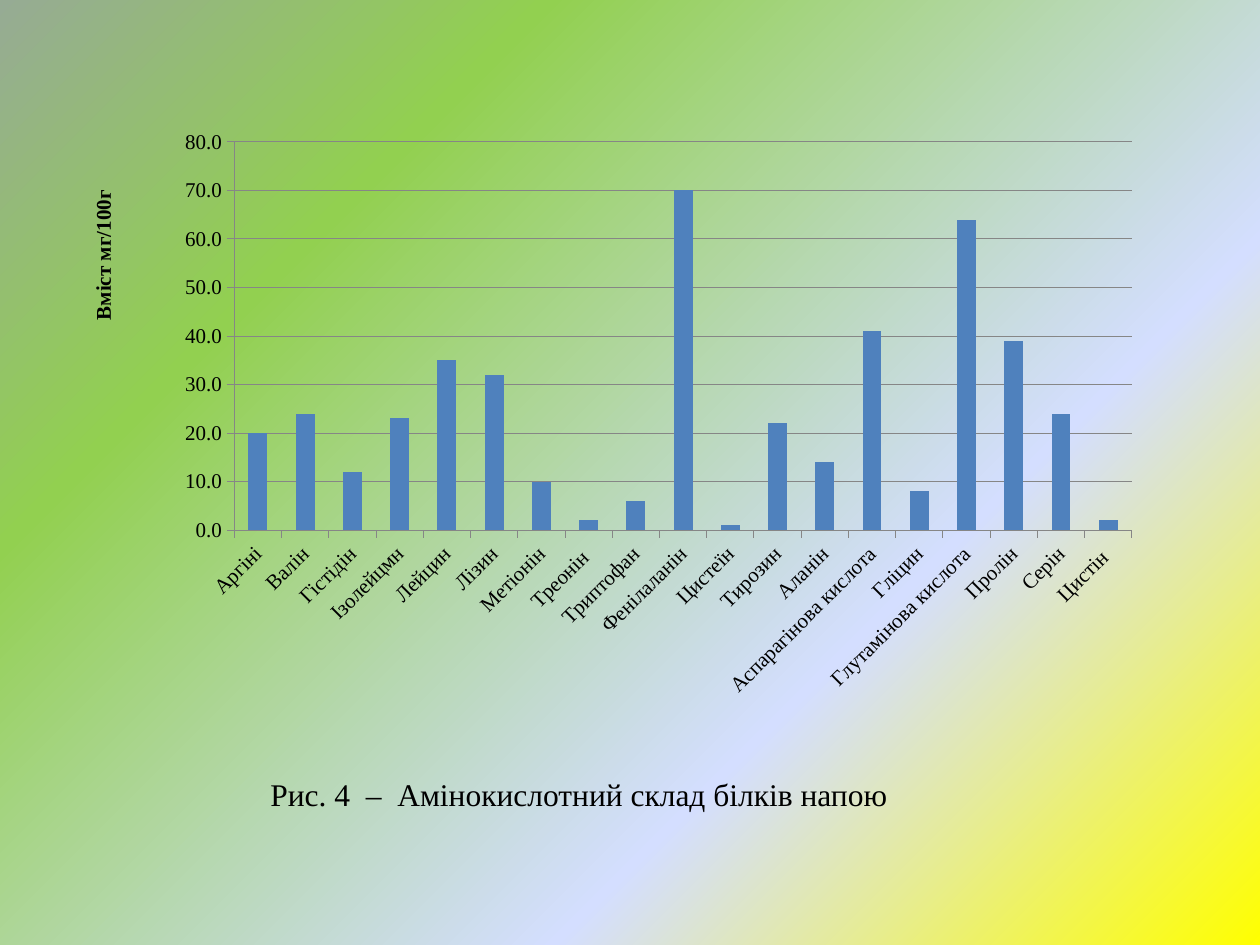
from lxml import etree
from pptx import Presentation
from pptx.chart.data import CategoryChartData
from pptx.dml.color import RGBColor
from pptx.enum.chart import XL_CHART_TYPE, XL_TICK_MARK
from pptx.enum.text import MSO_AUTO_SIZE, PP_ALIGN
from pptx.oxml import parse_xml
from pptx.oxml.ns import nsdecls, qn
from pptx.util import Emu, Pt

COLUMNS = XL_CHART_TYPE.COLUMN_CLUSTERED
OUTSIDE = XL_TICK_MARK.OUTSIDE
JUSTIFY = PP_ALIGN.JUSTIFY
GROW = MSO_AUTO_SIZE.SHAPE_TO_FIT_TEXT

FONT = "Times New Roman"
BLACK, BLUE, GREY = "000000", "4F81BD", "868686"
GRADIENT = [(0, "FFFF00"), (32, "D4DEFF"), (75, "92D050"), (100, "96AB94")]
AMINO_ACIDS = {
    "Аргіні": 20, "Валін": 24, "Гістідін": 12, "Ізолейцмн": 23,
    "Лейцин": 35, "Лізин": 32, "Метіонін": 10, "Треонін ": 2,
    "Триптофан": 6, "Фенілаланін": 70, "Цистеїн": 1, "Тирозин": 22,
    "Аланін": 14, "Аспарагінова кислота": 41, "Гліцин": 8,
    "Глутамінова кислота": 64, "Пролін": 39, "Серін": 24, "Цистін ": 2,
}


def px(length):
    return Emu(round(length * 914400 / 126))


def color(value):
    return RGBColor.from_string(value)


def style_font(font, size, bold=False):
    font.name, font.size, font.bold = FONT, Pt(size), bold
    font.color.rgb = color(BLACK)


def style_line(line):
    line.color.rgb = color(GREY)
    line.width = Pt(0.5)


def fill_background(page):
    """Spread the gradient from the bottom right corner."""
    stops = "".join(
        f'<a:gs pos="{position * 1000}"><a:srgbClr val="{value}"/></a:gs>'
        for position, value in GRADIENT)
    background = parse_xml(
        f'<p:bg {nsdecls("p", "a")}><p:bgPr><a:gradFill><a:gsLst>{stops}</a:gsLst>'
        '<a:path path="circle"><a:fillToRect l="100000" t="100000"/></a:path>'
        '</a:gradFill><a:effectLst/></p:bgPr></p:bg>')
    page.element.cSld.insert(0, background)


def manual_layout(**values):
    layout = etree.Element(qn("c:layout"))
    manual = etree.SubElement(layout, qn("c:manualLayout"))
    for name, value in values.items():
        etree.SubElement(manual, qn(f"c:{name}")).set("val", str(value))
    return layout


def place_plot(chart):
    area = chart.element.chart.plotArea
    for old in area.findall(qn("c:layout")):
        area.remove(old)
    area.insert(0, manual_layout(layoutTarget="inner", xMode="edge", yMode="edge",
                                 x=0.134, y=0.081, w=0.8, h=0.477))


def add_axis_title(axis, text):
    axis.has_title = True
    frame = axis.axis_title.text_frame
    span = frame.paragraphs[0].add_run()
    span.text = text
    style_font(span.font, 12, bold=True)
    body = frame._txBody.find(qn("a:bodyPr"))
    body.set("rot", "-5400000")
    body.set("vert", "horz")
    title = axis.axis_title._element
    for old in title.findall(qn("c:layout")):
        title.remove(old)
    title.find(qn("c:tx")).addnext(
        manual_layout(xMode="edge", yMode="edge", x=0.002, y=0.136))


def style_axis(axis):
    axis.major_tick_mark = OUTSIDE
    style_font(axis.tick_labels.font, 12)
    style_line(axis.format.line)


def add_column_chart(page, left, top, width, height):
    data = CategoryChartData(number_format="0.0")
    data.categories = list(AMINO_ACIDS)
    data.add_series("Series 1", list(AMINO_ACIDS.values()))
    chart = page.shapes.add_chart(
        COLUMNS, px(left), px(top), px(width), px(height), data).chart
    chart.has_legend = False
    chart.has_title = False
    style_font(chart.font, 12)

    plot = chart.plots[0]
    plot.vary_by_categories = False
    plot.gap_width = 150
    fill = plot.series[0].format.fill
    fill.solid()
    fill.fore_color.rgb = color(BLUE)

    names, amounts = chart.category_axis, chart.value_axis
    for axis in (names, amounts):
        style_axis(axis)
    names._element.find(qn("c:txPr")).find(qn("a:bodyPr")).set("rot", "-2700000")
    amounts.minimum_scale, amounts.maximum_scale, amounts.major_unit = 0, 80, 10
    amounts.tick_labels.number_format = "0.0"
    amounts.tick_labels.number_format_is_linked = False
    amounts.has_major_gridlines = True
    style_line(amounts.major_gridlines.format.line)
    add_axis_title(amounts, "Вміст мг/100г")
    place_plot(chart)


def add_caption(page, text, left, top, width, height):
    box = page.shapes.add_textbox(px(left), px(top), px(width), px(height))
    frame = box.text_frame
    frame.word_wrap = True
    frame.auto_size = GROW
    para = frame.paragraphs[0]
    para.alignment = JUSTIFY
    para.line_spacing = 1.5
    para.space_after = Pt(10)
    span = para.add_run()
    span.text = text
    style_font(span.font, 18)


def main():
    deck = Presentation()
    deck.slide_width, deck.slide_height = px(1260), px(945)
    page = deck.slides.add_slide(deck.slide_layouts[6])
    fill_background(page)
    add_column_chart(page, 84, 76, 1122, 814)
    add_caption(page, "Рис. 4  –  Амінокислотний склад білків напою", 258, 750, 745, 64)
    deck.save("out.pptx")


if __name__ == "__main__":
    main()
